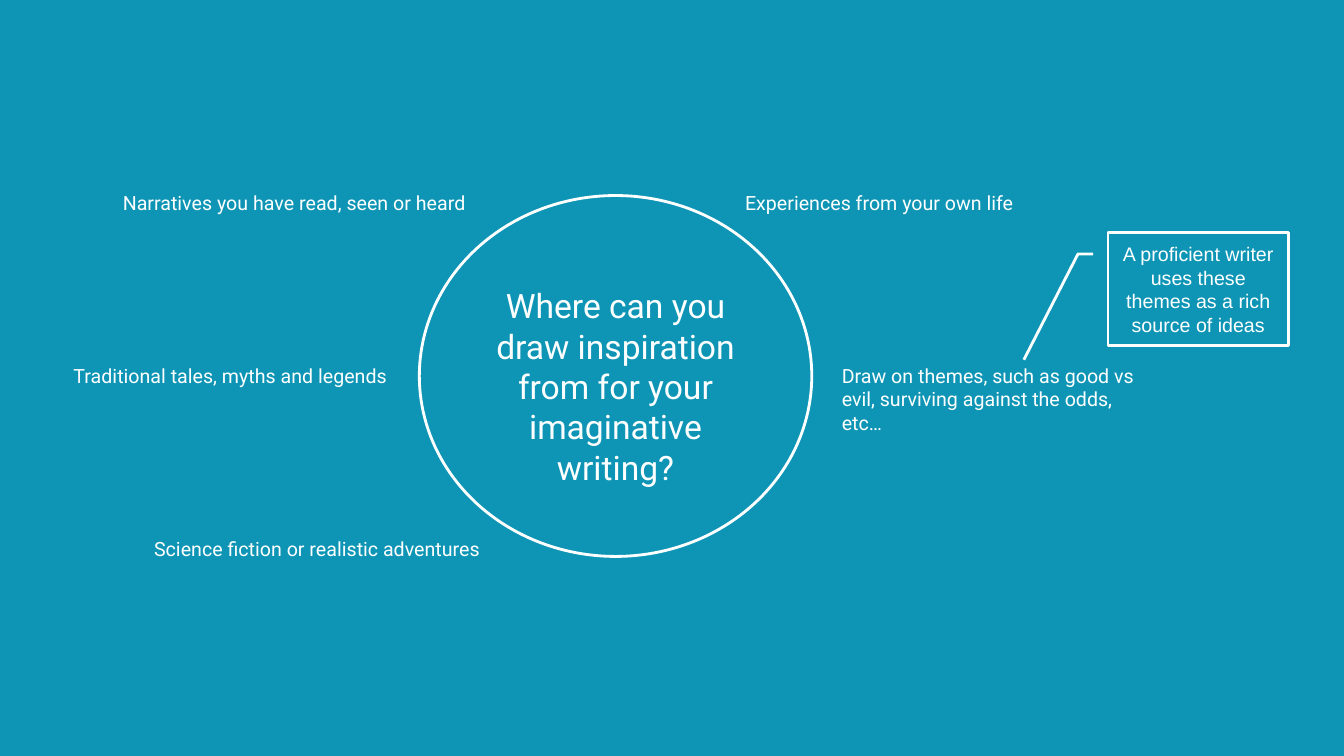
from pptx import Presentation
from pptx.dml.color import RGBColor
from pptx.enum.shapes import MSO_SHAPE
from pptx.enum.text import MSO_ANCHOR, MSO_AUTO_SIZE, PP_ALIGN
from pptx.util import Inches, Pt

OVAL, CALLOUT = MSO_SHAPE.OVAL, MSO_SHAPE.LINE_CALLOUT_2
MIDDLE, TOP = MSO_ANCHOR.MIDDLE, MSO_ANCHOR.TOP
GROW, FIXED = MSO_AUTO_SIZE.SHAPE_TO_FIT_TEXT, MSO_AUTO_SIZE.NONE
LEFT, CENTER = PP_ALIGN.LEFT, PP_ALIGN.CENTER
TEAL = RGBColor(0x0E, 0x95, 0xB6)
WHITE = RGBColor(0xFE, 0xFF, 0xFF)

deck = Presentation()
deck.slide_width, deck.slide_height = Inches(13.333), Inches(7.5)
slide = deck.slides.add_slide(deck.slide_layouts[5])
slide.background.fill.solid()
slide.background.fill.fore_color.rgb = TEAL


def place(x, y, wide, high):
    """Turn percentages of the slide into lengths."""
    across, down = deck.slide_width / 100, deck.slide_height / 100
    return int(x * across), int(y * down), int(wide * across), int(high * down)


def write(shape, text, size, face, align, frame):
    box = shape.text_frame
    box.text = text
    for key, value in frame.items():
        setattr(box, key, value)
    para = box.paragraphs[0]
    para.alignment = align
    font = para.runs[0].font
    for key, value in {"name": face, "size": Pt(size), "bold": False}.items():
        setattr(font, key, value)
    font.color.rgb = WHITE


# Outlined circle and callout
shapes = []
for kind, spot in ((OVAL, (31.2, 25.87, 29.2, 47.73)),
                   (CALLOUT, (82.45, 30.8, 13.43, 14.93))):
    shape = slide.shapes.add_shape(kind, *place(*spot))
    shape.shadow.inherit = False
    shape.fill.background()
    shape.line.color.rgb = WHITE
    shape.line.width = Pt(2)
    shapes.append(shape)

# Central question
middle = {"word_wrap": True, "vertical_anchor": MIDDLE, "auto_size": FIXED}
title = slide.shapes.title
title.left, title.top, title.width, title.height = place(35.5, 35.07, 20.6, 32)
write(title, "Where can you draw inspiration from for your imaginative writing?",
      24, "Roboto", CENTER, middle)
write(shapes[1], "A proficient writer uses these themes as a rich source of ideas",
      14, "Arial", CENTER, middle)

# Sources of ideas around the circle: row, left, width, height, wrap, text
FIRST, STEP = 24.53, 22.93
ideas = (
    (0, 8.4, 27.75, 4.53, False, "Narratives you have read, seen or heard"),
    (1, 4.73, 25, 4.53, False, "Traditional tales, myths and legends"),
    (2, 10.73, 25.75, 4.53, False, "Science fiction or realistic adventures"),
    (1, 61.9, 23.25, 10.8, True,
     "Draw on themes, such as good vs evil, surviving against the odds, etc…"),
    (0, 54.7, 21.6, 4.53, False, "Experiences from your own life"),
)
for row, x, wide, high, wrap, text in ideas:
    label = slide.shapes.add_textbox(*place(x, FIRST + row * STEP, wide, high))
    write(label, text, 14, "Roboto", LEFT,
          {"word_wrap": wrap, "vertical_anchor": TOP, "auto_size": GROW})

deck.save("out.pptx")
